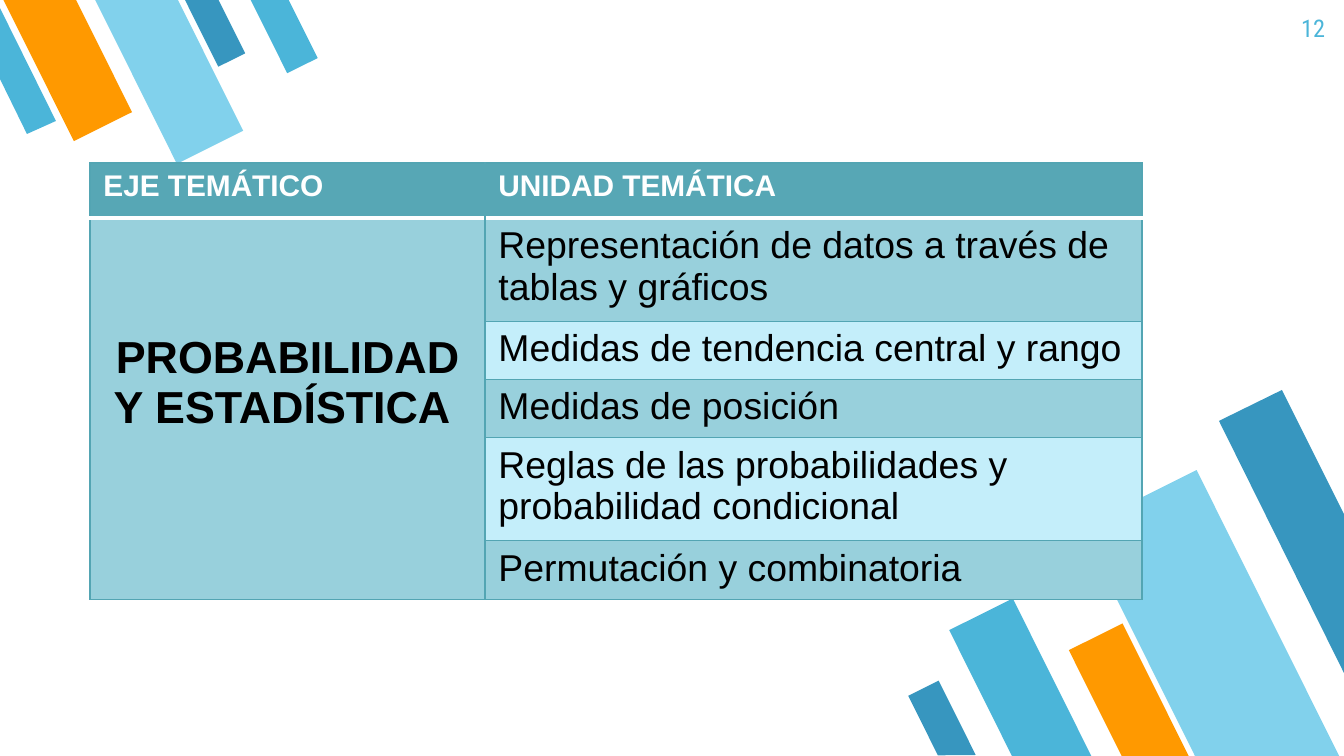
from lxml.etree import SubElement
from pptx import Presentation
from pptx.dml.color import RGBColor
from pptx.enum.shapes import MSO_SHAPE as Shape
from pptx.enum.text import MSO_ANCHOR as Anchor, PP_ALIGN as Align
from pptx.oxml import parse_xml
from pptx.oxml.ns import nsdecls, qn
from pptx.util import Pt

PX = 914400 / 134.4
WHITE = RGBColor(0xFF, 0xFF, 0xFF)
BLACK = RGBColor(0x00, 0x00, 0x00)
SKY = RGBColor(0x4B, 0xB5, 0xD9)
PALE = RGBColor(0x81, 0xD1, 0xEC)
ORANGE = RGBColor(0xFF, 0x99, 0x00)
BLUE = RGBColor(0x37, 0x96, 0xBF)
TEAL = RGBColor(0x57, 0xA7, 0xB5)
BORDER = RGBColor(0x53, 0xA5, 0xB3)
DARK_BAND = RGBColor(0x98, 0xD0, 0xDC)
LIGHT_BAND = RGBColor(0xC4, 0xEE, 0xFA)

HEADERS = ["EJE TEMÁTICO", "UNIDAD TEMÁTICA"]
AXIS = "PROBABILIDAD Y ESTADÍSTICA "
UNITS = [
    "Representación de datos a través de tablas y gráficos",
    "Medidas de tendencia central y rango",
    "Medidas de posición",
    "Reglas de las probabilidades y probabilidad condicional",
    "Permutación y combinatoria",
]
COLUMN_WIDTHS = [395, 657]
ROW_HEIGHTS = [55, 97, 55, 55, 97, 55]
LOWER_STRIPES = [
    (985, 605, 71, 177, SKY),
    (1146, 482, 129, 321, PALE),
    (1099, 629, 60, 149, ORANGE),
    (925, 684, 34, 83, BLUE),
]
UPPER_STRIPES = [
    (200, -11, 30, 75, BLUE),
    (35, -24, 65, 159, ORANGE),
    (132, -27, 74, 184, PALE),
    (267, -13, 34, 83, SKY),
]
EDGE_STRIPES = [
    ([(1282, 390), (1219, 421), (1344, 673), (1344, 514)], BLUE),
    ([(27, 134), (56, 121), (0, 8), (0, 79)], SKY),
]


def px(*lengths):
    return [round(length * PX) for length in lengths]


def paint(shape, color):
    shape.shadow.inherit = False
    shape.fill.solid()
    shape.fill.fore_color.rgb = color
    shape.line.fill.background()


def add_stripes(page, stripes, rotation):
    for left, top, width, height, color in stripes:
        stripe = page.shapes.add_shape(
            Shape.FLOWCHART_MANUAL_INPUT, *px(left, top, width, height))
        stripe.rotation = rotation
        stripe._element.spPr.find(qn("a:xfrm")).set("flipH", "1")
        paint(stripe, color)


def add_edge_stripe(page, points, color):
    start, *others = points
    builder = page.shapes.build_freeform(*start, scale=PX)
    builder.add_line_segments(others, close=True)
    paint(builder.convert_to_shape(), color)


def style_text(para, size, color, bold=False, font="Arial"):
    para.font.name = font
    para.font.size = Pt(size)
    para.font.bold = bold
    para.font.color.rgb = color


def set_borders(cell, **special):
    properties = cell._tc.get_or_add_tcPr()
    for index, side in enumerate("LRTB"):
        color, points = special.get(side, (BORDER, 0.75))
        line = parse_xml(f'<a:ln{side} {nsdecls("a")} w="{Pt(points)}"/>')
        fill = SubElement(line, qn("a:solidFill"))
        SubElement(fill, qn("a:srgbClr"), val=str(color))
        properties.insert(index, line)


def fill_cell(cell, text, fill, size, color, bold=False):
    cell.text = text
    cell.fill.solid()
    cell.fill.fore_color.rgb = fill
    style_text(cell.text_frame.paragraphs[0], size, color, bold)


def add_topic_table(page):
    table = page.shapes.add_table(
        len(ROW_HEIGHTS), len(COLUMN_WIDTHS),
        *px(90, 163, sum(COLUMN_WIDTHS), sum(ROW_HEIGHTS))).table
    for column, width in zip(table.columns, px(*COLUMN_WIDTHS)):
        column.width = width
    for row, height in zip(table.rows, px(*ROW_HEIGHTS)):
        row.height = height

    rule = (WHITE, 2)
    for index, header in enumerate(HEADERS):
        cell = table.cell(0, index)
        fill_cell(cell, header, TEAL, 16, WHITE, bold=True)
        inner_side = "RL"[index]
        set_borders(cell, B=rule, **{inner_side: (TEAL, 0.75)})

    axis = table.cell(1, 0)
    axis.merge(table.cell(len(UNITS), 0))
    fill_cell(axis, AXIS, DARK_BAND, 24, BLACK, bold=True)
    axis.text_frame.paragraphs[0].alignment = Align.CENTER
    axis.vertical_anchor = Anchor.TOP
    axis.margin_top, = px(115)

    for index, unit in enumerate(UNITS, start=1):
        top = {"T": rule} if index == 1 else {}
        cell = table.cell(index, 1)
        fill_cell(cell, unit, DARK_BAND if index % 2 else LIGHT_BAND, 20, BLACK)
        set_borders(cell, **top)
        set_borders(table.cell(index, 0), **top)


def add_page_number(page):
    box = page.shapes.add_textbox(*px(1258, 0, 80, 58))
    frame = box.text_frame
    frame.word_wrap = True
    frame.margin_left = frame.margin_right = px(13)[0]
    frame.margin_top = frame.margin_bottom = px(13)[0]
    para = frame.paragraphs[0]
    para.text = "12"
    para.alignment = Align.RIGHT
    style_text(para, 13, SKY, font="Roboto Condensed")


def main():
    deck = Presentation()
    deck.slide_width, deck.slide_height = px(1344, 756)
    page = deck.slides.add_slide(deck.slide_layouts[6])
    add_stripes(page, LOWER_STRIPES, 153.5)
    add_stripes(page, UPPER_STRIPES, 333.5)
    for points, color in EDGE_STRIPES:
        add_edge_stripe(page, points, color)
    add_page_number(page)
    add_topic_table(page)
    deck.save("out.pptx")


if __name__ == "__main__":
    main()
